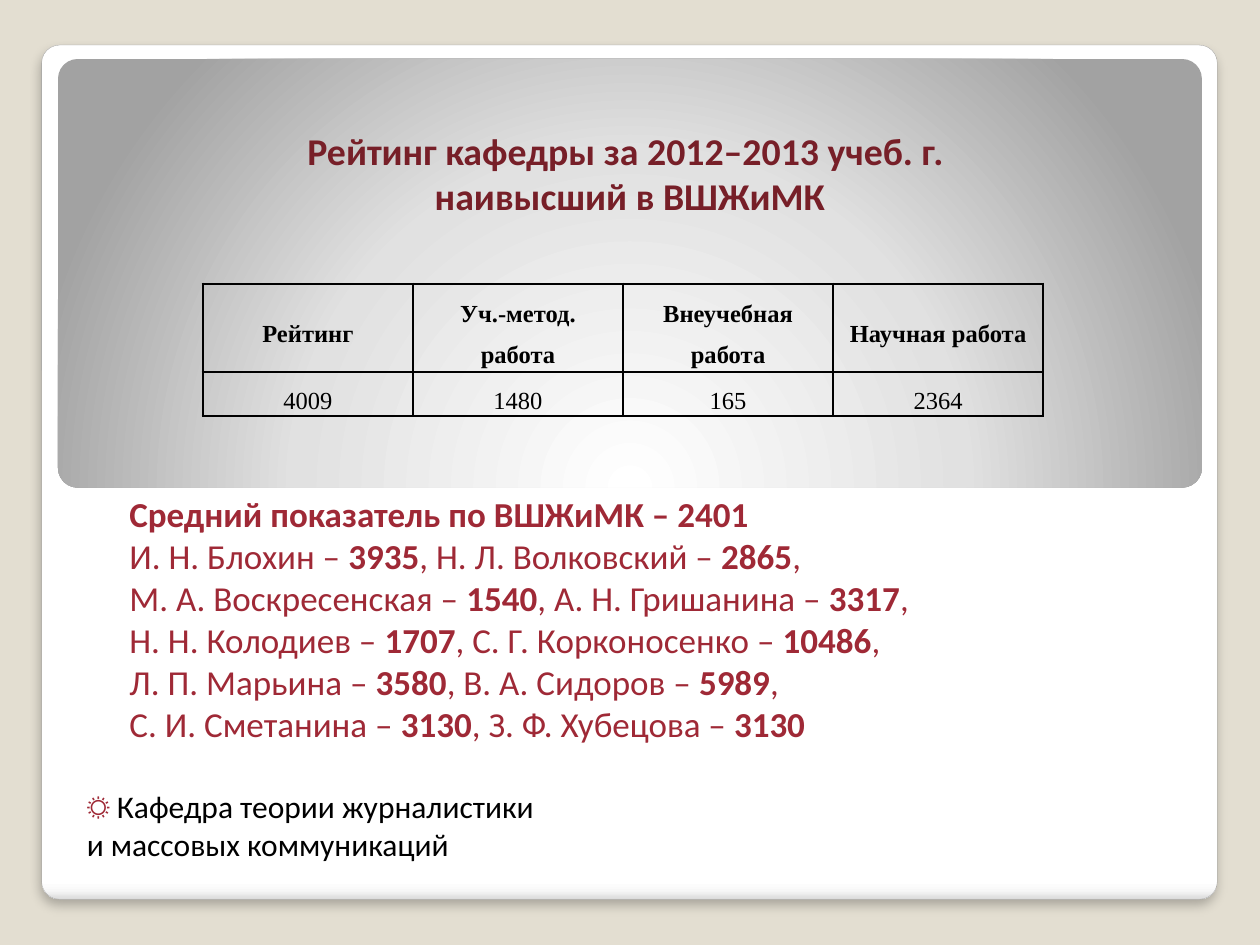
from lxml.etree import SubElement
from pptx import Presentation
from pptx.dml.color import RGBColor
from pptx.enum.shapes import MSO_SHAPE
from pptx.enum.text import MSO_ANCHOR, PP_ALIGN
from pptx.oxml import parse_xml
from pptx.oxml.ns import nsdecls, qn
from pptx.util import Cm, Pt

CRIMSON = "9F2936"
HEADERS = ["Рейтинг", "Уч.-метод. работа", "Внеучебная работа", "Научная работа"]
VALUES = ["4009", "1480", "165", "2364"]
STAFF_ROWS = [
    [("И. Н. Блохин", 3935), ("Н. Л. Волковский", 2865)],
    [("М. А. Воскресенская", 1540), ("А. Н. Гришанина", 3317)],
    [("Н. Н. Колодиев", 1707), ("С. Г. Корконосенко", 10486)],
    [("Л. П. Марьина", 3580), ("В. А. Сидоров", 5989)],
    [("С. И. Сметанина", 3130), ("З. Ф. Хубецова", 3130)],
]


def colour(code):
    """Turn a hex string into a colour."""
    return RGBColor.from_string(code)


def add_span(para, text, size, code, bold=False, font="Calibri"):
    """Add one formatted run to a paragraph."""
    span = para.add_run()
    span.text = text
    span.font.name = font
    span.font.size = Pt(size)
    span.font.bold = bold
    span.font.color.rgb = colour(code)


def add_panel(page, left, top, width, height, rounding, stops, direction):
    """Add a rounded panel with a gradient fill."""
    panel = page.shapes.add_shape(
        MSO_SHAPE.ROUNDED_RECTANGLE, Cm(left), Cm(top), Cm(width), Cm(height))
    panel.adjustments[0] = rounding
    panel.shadow.inherit = False
    panel.line.fill.background()
    marks = "".join(f'<a:gs pos="{place * 1000}"><a:srgbClr val="{code}"/></a:gs>'
                    for place, code in stops)
    gradient = parse_xml(f'<a:gradFill {nsdecls("a")} rotWithShape="1">'
                         f'<a:gsLst>{marks}</a:gsLst>{direction}</a:gradFill>')
    panel._element.spPr.find(qn("a:prstGeom")).addnext(gradient)
    return panel


def add_shadow(shape):
    """Give a shape a soft shadow falling downwards."""
    effects = shape._element.spPr.find(qn("a:effectLst"))
    shadow = SubElement(effects, qn("a:outerShdw"), blurRad=str(Pt(6)),
                        dist=str(Pt(4)), dir="5400000", algn="t", rotWithShape="0")
    tint = SubElement(shadow, qn("a:srgbClr"), val="000000")
    SubElement(tint, qn("a:alpha"), val="25000")


def add_box(page, left, top, width, height, inset=0.25, inset_top=0.13):
    """Add a wrapping text box and return its text frame."""
    box = page.shapes.add_textbox(Cm(left), Cm(top), Cm(width), Cm(height))
    frame = box.text_frame
    frame.word_wrap = True
    frame.margin_left = Cm(inset)
    frame.margin_top = Cm(inset_top)
    return frame


def add_title(page):
    """Add the two-line centred heading."""
    frame = add_box(page, 1.9, 2.44, 21.6, 2.1)
    para = frame.paragraphs[0]
    para.alignment = PP_ALIGN.CENTER
    add_span(para, "Рейтинг кафедры за 2012–2013 учеб. г. ", 21.6, "771F28", True)
    para.add_line_break()
    add_span(para, "наивысший в ВШЖиМК", 21.6, "771F28", True)


def add_staff(page):
    """Add the average and the rating of each teacher."""
    frame = add_box(page, 2, 9.93, 21.6, 5.8, 0.61, 0)
    add_span(frame.paragraphs[0], "Средний показатель по ВШЖиМК – 2401", 20, CRIMSON, True)
    for row in STAFF_ROWS:
        para = frame.add_paragraph()
        for name, rating in row:
            add_span(para, f"{name} – ", 20, CRIMSON)
            add_span(para, str(rating), 20, CRIMSON, True)
            if (name, rating) != STAFF_ROWS[-1][-1]:
                add_span(para, ", " if name == row[0][0] else ",", 20, CRIMSON)


def add_department(page):
    """Add the department name at the foot."""
    frame = add_box(page, 1.5, 15.73, 12.7, 1.8)
    add_span(frame.paragraphs[0], "☼ ", 18, CRIMSON)
    add_span(frame.paragraphs[0], "Кафедра теории журналистики", 18, "000000")
    add_span(frame.add_paragraph(), "и массовых коммуникаций", 18, "000000")


def set_borders(cell, left, right):
    """Draw black borders, with the given side widths in points."""
    cell.fill.background()
    properties = cell._tc.get_or_add_tcPr()
    widths = {"lnL": left, "lnR": right, "lnT": 1.5, "lnB": 1.5}
    for index, (side, width) in enumerate(widths.items()):
        properties.insert(index, parse_xml(
            f'<a:{side} {nsdecls("a")} w="{Pt(width)}"><a:solidFill>'
            f'<a:srgbClr val="000000"/></a:solidFill></a:{side}>'))


def add_rating_table(page):
    """Add the table of department ratings."""
    last = len(HEADERS) - 1
    table = page.shapes.add_table(
        2, len(HEADERS), Cm(4.09), Cm(5.72), Cm(16.94), Cm(2.67)).table
    for row, height in zip(table.rows, (1.78, 0.89)):
        row.height = Cm(height)
    for row_index, texts in enumerate((HEADERS, VALUES)):
        for column, text in enumerate(texts):
            cell = table.cell(row_index, column)
            cell.vertical_anchor = MSO_ANCHOR.MIDDLE
            cell.margin_left = cell.margin_right = Cm(0.18)
            cell.margin_top = cell.margin_bottom = 0
            para = cell.text_frame.paragraphs[0]
            para.alignment = PP_ALIGN.CENTER
            para.line_spacing = 1.5
            add_span(para, text, 14, "000000", row_index == 0, "Times New Roman")
            set_borders(cell, 1.5 if column == 0 else 1, 1.5 if column == last else 1)


def main():
    """Build the slide and save the deck."""
    deck = Presentation()
    deck.slide_width, deck.slide_height = Cm(25.4), Cm(19.05)
    page = deck.slides.add_slide(deck.slide_layouts[6])
    page.background.fill.solid()
    page.background.fill.fore_color.rgb = colour("E3DED1")
    card = add_panel(page, 0.84, 0.91, 23.7, 17.22, 0.021,
                     [(0, "FFFFFF"), (98, "FFFFFF"), (99, "F7F7F7"), (100, "DADADA")],
                     '<a:lin ang="5400000" scaled="0"/>')
    card.line.color.rgb = colour("A4A4A4")
    card.line.width = Pt(0.16)
    add_shadow(card)
    add_panel(page, 1.17, 1.19, 23.06, 8.64, 0.046,
              [(0, "FFFFFF"), (55, "E1E1E1"), (100, "A2A2A2")],
              '<a:path path="circle"><a:fillToRect l="50000" t="175000" '
              'r="50000" b="-75000"/></a:path>')
    add_title(page)
    add_staff(page)
    add_department(page)
    add_rating_table(page)
    deck.save("out.pptx")


if __name__ == "__main__":
    main()
